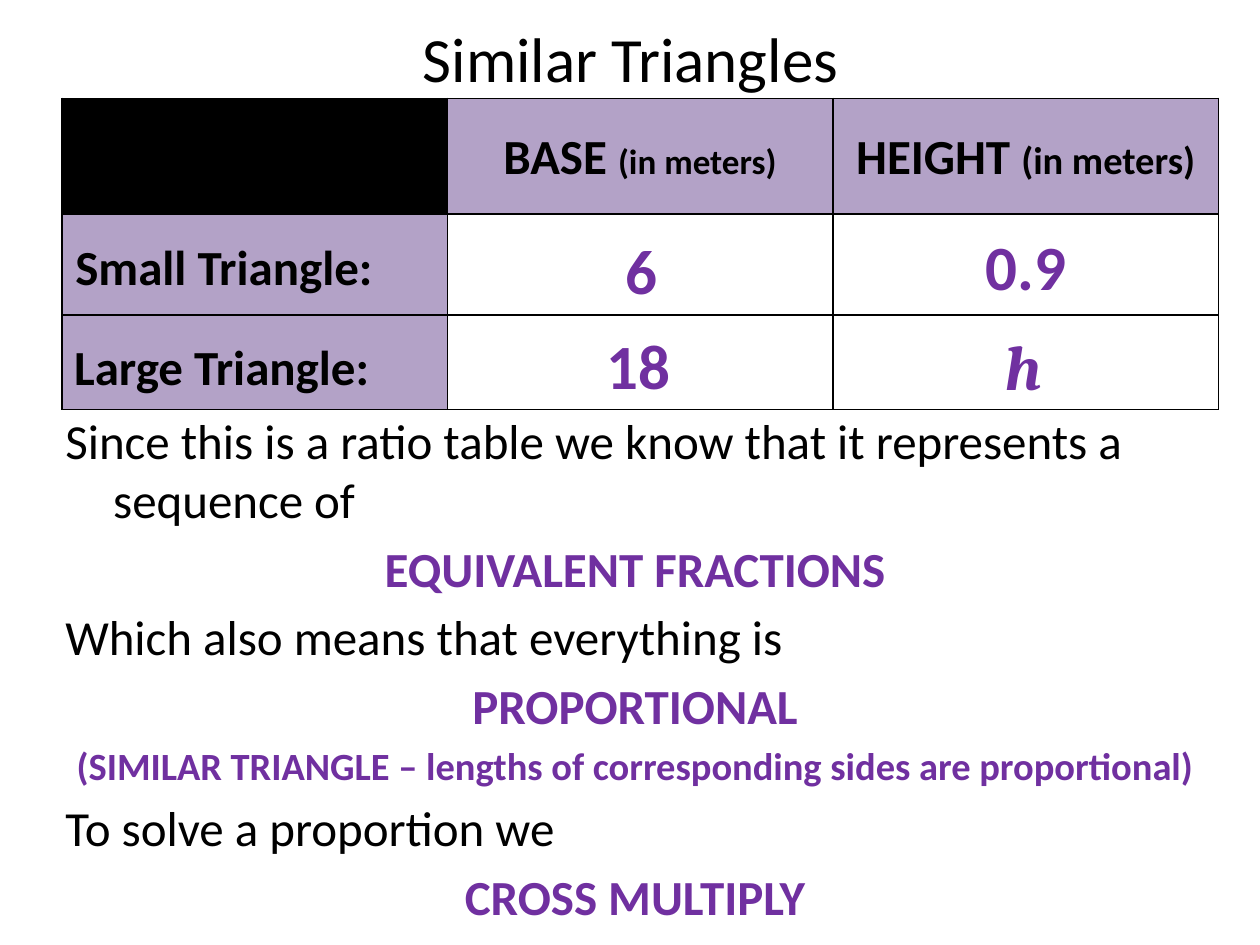
from lxml import etree
from pptx import Presentation
from pptx import util as u
from pptx.dml.color import RGBColor
from pptx.enum import text
from pptx.oxml.ns import qn

COLORS = {"black": "000000", "purple": "7030A0", "lavender": "B3A2C7"}
INDENT = 0.38


class SlideBuilder:
    def __init__(self, slide, font="Calibri", border=1):
        self.slide = slide
        self.font = font
        self.border = border

    def add_text(self, box, paragraphs, anchor=text.MSO_ANCHOR.TOP, hanging=True, grow=False):
        """Each paragraph is (centered, runs); each run is (words, size, color, style)."""
        shape = self.slide.shapes.add_textbox(*map(u.Inches, box))
        frame = shape.text_frame
        frame.word_wrap = True
        frame.vertical_anchor = anchor
        if grow:
            frame.auto_size = text.MSO_AUTO_SIZE.SHAPE_TO_FIT_TEXT
        frame.text = "\n".join("".join(run[0] for run in runs) for _, runs in paragraphs)
        for paragraph, (centered, runs) in zip(frame.paragraphs, paragraphs):
            paragraph.alignment = text.PP_ALIGN.CENTER if centered else text.PP_ALIGN.LEFT
            if hanging:
                self.hang(paragraph, runs[0][1])
            paragraph.runs[0].text = runs[0][0]
            for words, *_ in runs[1:]:
                paragraph.add_run().text = words
            for run, (_, size, color, style) in zip(paragraph.runs, runs):
                self.format_run(run, size, color, style)

    def hang(self, paragraph, size):
        """Indent all lines but the first, with a fifth of a line above."""
        paragraph.space_before = u.Pt(round(size * 0.2, 1))
        properties = paragraph._p.get_or_add_pPr()
        properties.set("marL", str(u.Inches(INDENT)))
        properties.set("indent", str(u.Inches(-INDENT)))

    def format_run(self, run, size, color, style):
        run.font.name = "Cambria" if "i" in style else self.font
        run.font.size = u.Pt(size)
        run.font.bold = "b" in style
        run.font.italic = "i" in style
        run.font.color.rgb = RGBColor.from_string(COLORS[color])

    def add_grid(self, box, column_widths, row_heights, fills):
        frame = self.slide.shapes.add_table(
            len(row_heights), len(column_widths), *map(u.Inches, box))
        table = frame.table
        table.first_row = table.horz_banding = False
        for column, width in zip(table.columns, column_widths):
            column.width = u.Inches(width)
        for row, height, row_fills in zip(table.rows, row_heights, fills):
            row.height = u.Inches(height)
            for cell, fill in zip(row.cells, row_fills):
                if fill:
                    cell.fill.solid()
                    cell.fill.fore_color.rgb = RGBColor.from_string(COLORS[fill])
                else:
                    cell.fill.background()
                self.add_borders(cell)

    def add_borders(self, cell):
        properties = cell._tc.get_or_add_tcPr()
        for index, side in enumerate(("lnL", "lnR", "lnT", "lnB")):
            line = etree.Element(qn(f"a:{side}"), w=str(u.Pt(self.border)))
            solid = etree.SubElement(line, qn("a:solidFill"))
            etree.SubElement(solid, qn("a:srgbClr"), val=COLORS["black"])
            properties.insert(index, line)


def statement(words):
    return False, [(words, 28, "black", "")]


def answer(words, size=28):
    return True, [(words, size, "purple", "b")]


def main():
    presentation = Presentation()
    presentation.slide_width, presentation.slide_height = u.Inches(10), u.Inches(7.5)
    builder = SlideBuilder(presentation.slides.add_slide(presentation.slide_layouts[6]))

    builder.add_text((0.17, 0.02, 9.67, 0.87),
                     [(True, [("Similar Triangles", 36, "black", "")])],
                     anchor=text.MSO_ANCHOR.MIDDLE, hanging=False)
    builder.add_text((0.42, 3.21, 9.24, 4.54), [
        statement("Since this is a ratio table we know that it represents a sequence of"),
        answer("EQUIVALENT FRACTIONS"),
        statement("Which also means that everything is"),
        answer("PROPORTIONAL"),
        answer("(SIMILAR TRIANGLE – lengths of corresponding sides are proportional)", 22),
        statement("To solve a proportion we"),
        answer("CROSS MULTIPLY"),
    ])
    builder.add_grid((0.49, 0.78, 9.18, 2.47), [3.06] * 3, [0.92, 0.8, 0.75], [
        ["black", "lavender", "lavender"],
        ["lavender", None, None],
        ["lavender", None, None],
    ])

    for left, top, label in ((0.5, 1.83, "Small Triangle:"), (0.49, 2.62, "Large Triangle:")):
        builder.add_text((left, top, 3, 0.67), [(False, [(label, 28, "black", "b")])])
    for left, heading, unit_size in ((3.58, "BASE ", 20), (6.64, "HEIGHT ", 22)):
        builder.add_text((left, 0.95, 3, 0.67), [
            (True, [(heading, 28, "black", "b"), ("(in meters)", unit_size, "black", "b")])])
    for left, top, width, value, style in (
        (3.61, 1.79, 2.97, "6", "b"),
        (6.64, 1.76, 3.01, "0.9", "b"),
        (6.58, 2.55, 3.08, "h", "bi"),
        (3.55, 2.54, 3.04, "18", "b"),
    ):
        builder.add_text((left, top, width, 0.71), [(True, [(value, 36, "purple", style)])],
                         hanging=False, grow=True)

    presentation.save("out.pptx")


if __name__ == "__main__":
    main()
